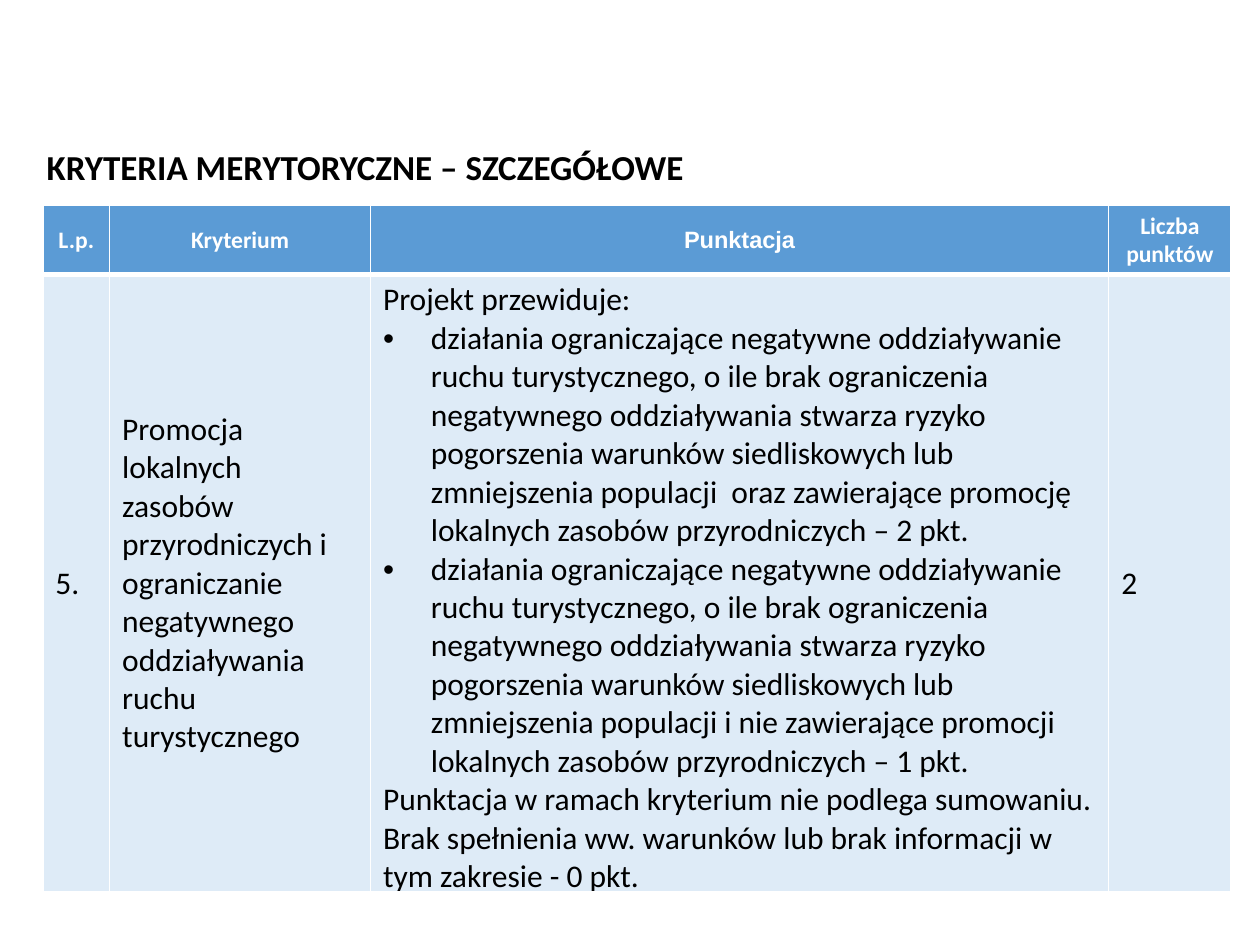
import pptx
import pptx.util
import pptx.dml.color
import pptx.enum.text
import pptx.oxml
import pptx.oxml.ns

Inches, Pt = pptx.util.Inches, pptx.util.Pt
PP_ALIGN = pptx.enum.text.PP_ALIGN
MIDDLE = pptx.enum.text.MSO_ANCHOR.MIDDLE
NS = pptx.oxml.ns.nsdecls("a")


def rgb(value):
    return pptx.dml.color.RGBColor.from_string(value)


def write(tf, text, size=18, font="Calibri", color="000000", bold=False,
          align=PP_ALIGN.LEFT, bullets=()):
    """Fill a text frame, one paragraph a line; bullets holds line indexes."""
    for i, line in enumerate(text.split("\n")):
        p = tf.paragraphs[0] if i == 0 else tf.add_paragraph()
        p.alignment = align
        if i in bullets:
            pPr = p._p.get_or_add_pPr()
            pPr.set("marL", str(Inches(0.38)))
            pPr.set("indent", str(Inches(-0.38)))
            for xml in (f'<a:buFont {NS} typeface="Arial"/>',
                        f'<a:buChar {NS} char="•"/>',
                        f'<a:tabLst {NS}><a:tab pos="{Inches(0.5)}" algn="l"/></a:tabLst>'):
                pPr.append(pptx.oxml.parse_xml(xml))
        r = p.add_run()
        r.text = line
        r.font.size = Pt(size)
        r.font.name = font
        r.font.bold = bold
        r.font.color.rgb = rgb(color)


prs = pptx.Presentation()
prs.slide_width, prs.slide_height = Inches(10), Inches(7.5)
s = prs.slides.add_slide(prs.slide_layouts[5])

# Title
title = s.shapes.title
title.left, title.top = Inches(0.27), Inches(1.1)
title.width, title.height = Inches(5.3), Inches(0.44)
tf = title.text_frame
tf.word_wrap = False
tf.auto_size = pptx.enum.text.MSO_AUTO_SIZE.SHAPE_TO_FIT_TEXT
tf.vertical_anchor = MIDDLE
write(tf, "KRYTERIA MERYTORYCZNE – SZCZEGÓŁOWE", size=20, bold=True)

# Wording of the table
headers = ["L.p.", "Kryterium", "Punktacja", "Liczba punktów"]
scoring = """Projekt przewiduje:
działania ograniczające negatywne oddziaływanie ruchu turystycznego, o ile brak ograniczenia negatywnego oddziaływania stwarza ryzyko pogorszenia warunków siedliskowych lub zmniejszenia populacji  oraz zawierające promocję lokalnych zasobów przyrodniczych – 2 pkt.
działania ograniczające negatywne oddziaływanie ruchu turystycznego, o ile brak ograniczenia negatywnego oddziaływania stwarza ryzyko pogorszenia warunków siedliskowych lub zmniejszenia populacji i nie zawierające promocji lokalnych zasobów przyrodniczych – 1 pkt.
Punktacja w ramach kryterium nie podlega sumowaniu.
Brak spełnienia ww. warunków lub brak informacji w tym zakresie - 0 pkt."""
criterion = ("Promocja lokalnych zasobów przyrodniczych i ograniczanie "
             "negatywnego oddziaływania ruchu turystycznego")
values = ["5.", criterion, scoring, "2"]

# Table grid
table = s.shapes.add_table(2, 4, Inches(0.34), Inches(1.63),
                           Inches(9.43), Inches(5.45)).table
for column, width in zip(table.columns, (0.53, 2.07, 5.86, 0.97)):
    column.width = Inches(width)
for row, height in zip(table.rows, (0.55, 4.9)):
    row.height = Inches(height)

# Cells: white borders, with a thick one under the header
for i, texts in enumerate((headers, values)):
    for j, text in enumerate(texts):
        cell = table.cell(i, j)
        cell.vertical_anchor = MIDDLE
        tcPr = cell._tc.get_or_add_tcPr()
        widths = {"L": 1, "R": 1, "T": 3 if i else 1, "B": 1 if i else 3}
        for side, width in widths.items():
            tcPr.append(pptx.oxml.parse_xml(
                f'<a:ln{side} {NS} w="{Pt(width)}"><a:solidFill>'
                f'<a:srgbClr val="FFFFFF"/></a:solidFill></a:ln{side}>'))
        cell.fill.solid()
        cell.fill.fore_color.rgb = rgb("DEEBF7" if i else "5B9BD5")
        if i == 0:
            write(cell.text_frame, text, size=13.5, color="FFFFFF", bold=True,
                  font="Arial" if text == "Punktacja" else "Calibri",
                  align=PP_ALIGN.CENTER)
        else:
            write(cell.text_frame, text, bullets=(1, 2))

prs.save("out.pptx")
